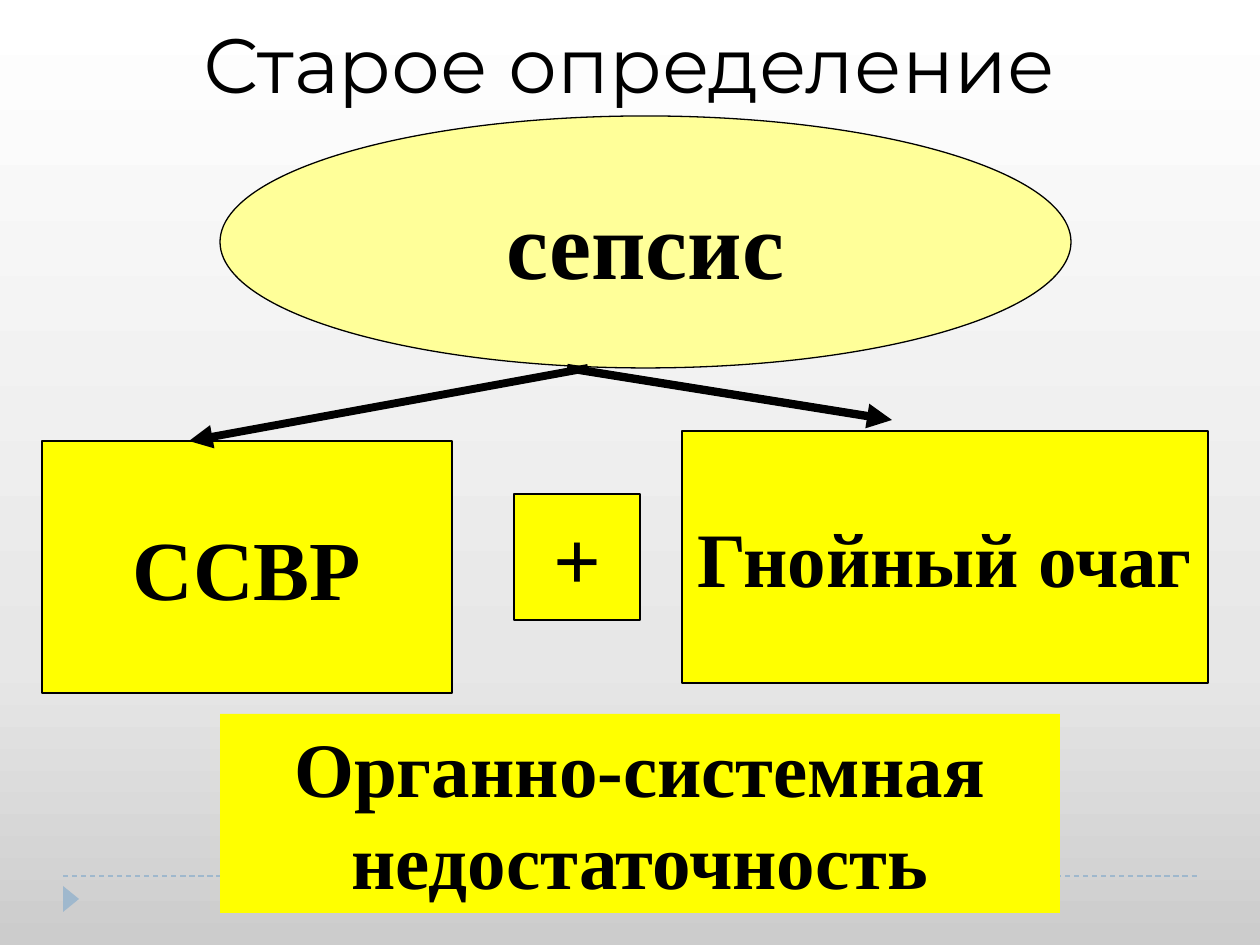
from lxml import etree
from pptx import Presentation
from pptx import util as u
from pptx.dml.color import RGBColor
from pptx.enum import dml, shapes, text
from pptx.oxml import ns

PX = u.Inches(1) / 126
SERIF = "Times New Roman"
YELLOW = "FFFF00"
BLACK = "000000"
RULE = "9FB8CD"


def px(n):
    """Turn pixels into EMU."""
    return u.Emu(round(n * PX))


def color(value):
    """Turn a hex string into a colour."""
    return RGBColor.from_string(value)


def put_text(sp, content, size, font=SERIF, bold=True, wrap=False,
             anchor=text.MSO_ANCHOR.MIDDLE):
    """Write one centred black paragraph into a shape."""
    tf = sp.text_frame
    tf.word_wrap = wrap
    tf.auto_size = text.MSO_AUTO_SIZE.NONE
    tf.vertical_anchor = anchor
    p = tf.paragraphs[0]
    p.alignment = text.PP_ALIGN.CENTER
    r = p.add_run()
    r.text = content
    r.font.name = font
    r.font.size = u.Pt(size)
    r.font.bold = bold
    r.font.color.rgb = color(BLACK)


def add_block(s, kind, box, fill=YELLOW, line=BLACK):
    """Add a filled preset shape with an optional thin outline."""
    sp = s.shapes.add_shape(kind, *map(px, box))
    sp.shadow.inherit = False
    sp.fill.solid()
    sp.fill.fore_color.rgb = color(fill)
    if line:
        sp.line.color.rgb = color(line)
        sp.line.width = u.Pt(0.75)
    else:
        sp.line.fill.background()
    return sp


def add_line(s, start, end, stroke=BLACK, width=0.75, dash=None, arrow=False):
    """Add a straight connector, dashed or with an arrowhead if asked."""
    c = s.shapes.add_connector(shapes.MSO_CONNECTOR.STRAIGHT,
                               *map(px, (*start, *end)))
    c.line.color.rgb = color(stroke)
    c.line.width = u.Pt(width)
    if dash:
        c.line.dash_style = dash
    if arrow:
        etree.SubElement(c.line._get_or_add_ln(), ns.qn("a:tailEnd"), type="triangle")
    etree.SubElement(c._element.spPr, ns.qn("a:effectLst"))


def paint_background(s, stops):
    """Fill the background with a gradient rising from the bottom."""
    fill = s.background.fill
    fill.gradient()
    fill.gradient_angle = 90
    stop_list = s._element.find(".//" + ns.qn("a:gsLst"))
    for old in list(stop_list):
        stop_list.remove(old)
    for percent, value in stops:
        gs = etree.SubElement(stop_list, ns.qn("a:gs"), pos=str(percent * 1000))
        etree.SubElement(gs, ns.qn("a:srgbClr"), val=value)


def add_footer(s, x, y, w):
    """Draw the dashed footer rule and its marker."""
    add_line(s, (x, y), (x + w, y), RULE, dash=dml.MSO_LINE.DASH)
    marker = add_block(s, shapes.MSO_SHAPE.ISOSCELES_TRIANGLE,
                       (x - 5, y + 15, 26, 16), RULE, None)
    marker.rotation = 90


def add_title(s, x, y, w, h):
    """Place and format the title placeholder."""
    sp = s.shapes.title
    sp.left, sp.top, sp.width, sp.height = map(px, (x, y, w, h))
    put_text(sp, "Старое определение", 44, "Montserrat", False, True,
             text.MSO_ANCHOR.TOP)


def add_diagram(s, x, y):
    """Draw the sepsis definition: concept, components and outcome."""
    rect, oval = shapes.MSO_SHAPE.RECTANGLE, shapes.MSO_SHAPE.OVAL
    concept = add_block(s, oval, (x + 178, y, 851, 252), "FFFF99")
    put_text(concept, "сепсис", 54)

    components = (("ССВР", 48, (0, 325, 410, 252)),
                  ("+", 48, (472, 378, 126, 126)),
                  ("Гнойный очаг", 44, (640, 315, 526, 252)))
    for label, size, (dx, dy, w, h) in components:
        put_text(add_block(s, rect, (x + dx, y + dy, w, h)), label, size)

    for start, end, width in ((546, (147, 325), 4.5), (525, (850, 304), 4.75)):
        add_line(s, (x + start, y + 252), (x + end[0], y + end[1]),
                 width=width, arrow=True)

    outcome = add_block(s, rect, (x + 178, y + 598, 840, 199), line=None)
    put_text(outcome, "Органно-системная недостаточность", 44, wrap=True,
             anchor=text.MSO_ANCHOR.TOP)


def main():
    """Build and save the slide."""
    prs = Presentation()
    prs.slide_width, prs.slide_height = px(1260), px(945)
    s = prs.slides.add_slide(prs.slide_layouts[5])
    paint_background(s, ((0, "CCCCCC"), (30, "E7E7E7"), (100, "FFFFFF")))
    add_footer(s, 63, 876, 1134)
    add_title(s, 52, 10, 1155, 106)
    add_diagram(s, 42, 116)
    prs.save("out.pptx")


if __name__ == "__main__":
    main()
